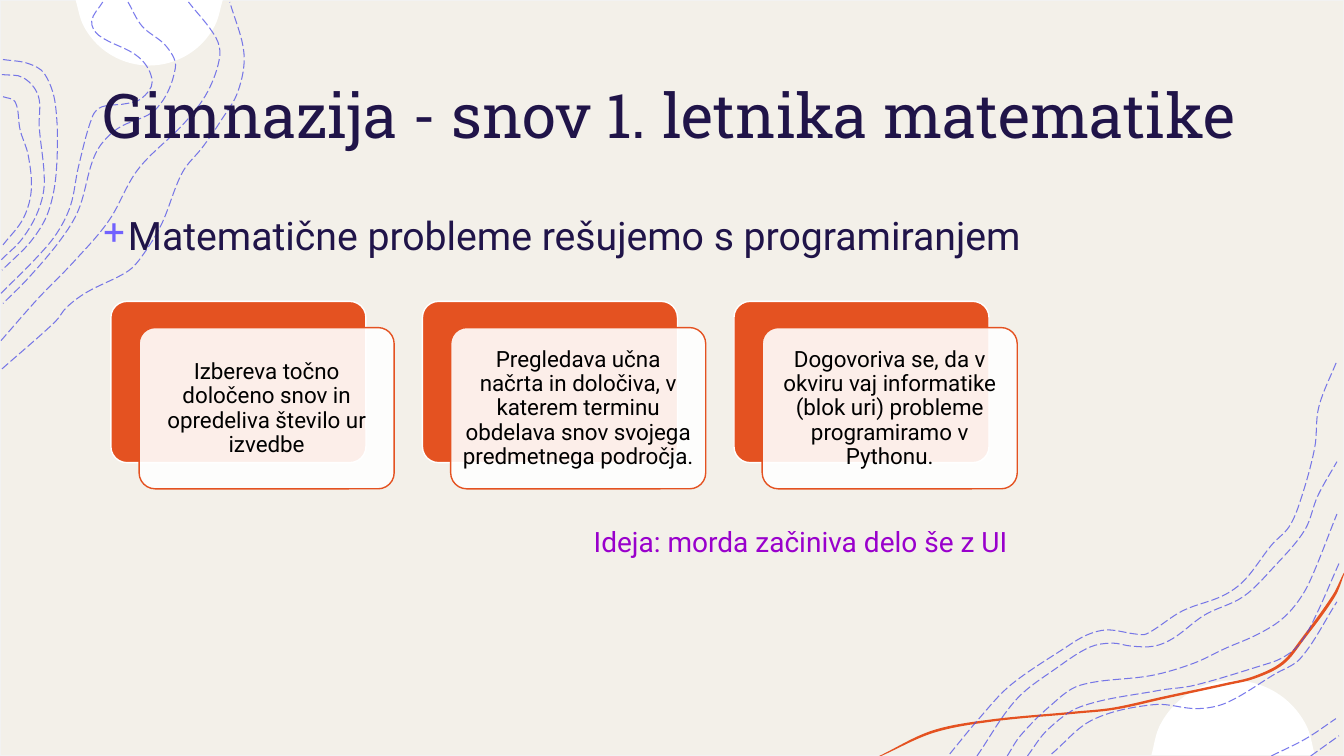
"""Builds a slide on solving first-year maths problems with programming."""
from math import asin, cos, dist, pi, sin

from lxml.etree import SubElement
from pptx import Presentation
from pptx.dml.color import RGBColor
from pptx.enum.dml import MSO_LINE
from pptx.enum.shapes import MSO_SHAPE
from pptx.enum.text import MSO_ANCHOR, PP_ALIGN
from pptx.oxml.ns import qn
from pptx.util import Cm, Pt

TITLE = "Gimnazija - snov 1. letnika matematike"
LEAD = "Matematične probleme rešujemo s programiranjem"
IDEA = "Ideja: morda začiniva delo še z UI"
CARDS = [
    "Izbereva točno določeno snov in opredeliva število ur izvedbe",
    "Pregledava učna načrta in določiva, v katerem terminu obdelava snov svojega predmetnega področja.",
    "Dogovoriva se, da v okviru vaj informatike (blok uri) probleme programiramo v Pythonu.",
]

WIDE, HIGH = 13.33, 7.5
WHITE = RGBColor(0xFF, 0xFF, 0xFF)
BLACK = RGBColor(0, 0, 0)
SAND = RGBColor(0xF3, 0xF0, 0xE9)
EDGE = RGBColor(0xF2, 0xF2, 0xF2)
ORANGE = RGBColor(0xE4, 0x52, 0x21)
BLUE = RGBColor(0x4D, 0x4E, 0xE6)
NAVY = RGBColor(0x20, 0x14, 0x49)
PURPLE = RGBColor(0x99, 0x00, 0xCC)

CAPS = [(1.48, 0, 0.73, 0.65, 1), (12.23, 7.49, 0.81, 0.74, -1)]
BAND = [
    (8.72, 7.5), (9.24, 7.25), (9.81, 7.14), (10.65, 7.06), (11.04, 7.02), (11.54, 6.91),
    (12.14, 6.78), (12.43, 6.71), (12.71, 6.57), (12.91, 6.33), (13.22, 5.9), (13.33, 5.68),
]
LEFT = [
    [(0.02, 3.66), (0.55, 3.19), (0.66, 3.05), (0.86, 2.9), (1.27, 2.69), (1.41, 2.54),
     (1.6, 2.23), (1.81, 1.71), (2.01, 1.46), (2.19, 1.2), (2.36, 0.91), (2.42, 0.53),
     (2.28, 0.02)],
    [(0.01, 3.38), (0.38, 2.96), (0.73, 2.6), (1.08, 2.19), (1.37, 1.68), (1.83, 1.22),
     (2.06, 0.91), (2.18, 0.56), (2.14, 0.37), (1.87, 0.02)],
    [(1.27, 0.02), (1.41, 0.26), (1.65, 0.46), (1.74, 0.67), (1.55, 1.08), (1.16, 1.28),
     (0.95, 1.52), (0.78, 2.08), (0.6, 2.38), (0.28, 2.76), (0.03, 3.01)],
    [(0.01, 2.91), (0.35, 2.57), (0.56, 2.32), (0.7, 2.04), (0.78, 1.65), (0.92, 1.15),
     (1.01, 1.06), (1.24, 1.03), (1.4, 0.98), (1.51, 0.81), (1.38, 0.57), (0.98, 0.35),
     (0.91, 0.21), (1.02, 0.02)],
    [(0.03, 0.59), (0.28, 0.63), (0.44, 0.73), (0.55, 1.04), (0.56, 1.68), (0.48, 2.1),
     (0.31, 2.39), (0.02, 2.68)],
    [(0.02, 0.74), (0.23, 0.77), (0.38, 0.95), (0.39, 1.26), (0.44, 1.81), (0.38, 2.09),
     (0.22, 2.37), (0.01, 2.58)],
    [(0.03, 0.96), (0.15, 1.01), (0.2, 1.29), (0.28, 1.54), (0.31, 1.89), (0.23, 2.17),
     (0.03, 2.43)],
]
RIGHT = [
    [(9.42, 7.48), (9.71, 7.13), (10.02, 6.8), (10.56, 6.43), (10.78, 6.3), (10.98, 6.25),
     (11.26, 6.29), (11.37, 6.29), (11.73, 6.06), (12.13, 5.91), (12.34, 5.76), (12.61, 5.41),
     (12.79, 5.22), (12.91, 4.93), (13.04, 4.44), (13.08, 4.04), (13.26, 3.58)],
    [(9.69, 7.5), (10.08, 6.94), (10.49, 6.62), (10.81, 6.42), (11.03, 6.38), (11.22, 6.41),
     (11.45, 6.41), (11.64, 6.33), (11.95, 6.1), (12.33, 5.92), (12.63, 5.63), (12.94, 5.26),
     (13.07, 4.92), (13.26, 4.58)],
    [(13, 7.5), (13.28, 7.3)],
    [(12.61, 7.5), (12.95, 7.33), (13.25, 7.13)],
    [(10.43, 7.48), (10.84, 7.14), (11.45, 6.99), (11.88, 7.03), (12.17, 6.97), (12.64, 6.69),
     (12.9, 6.53), (13.26, 5.97)],
    [(10.19, 7.5), (10.39, 7.24), (10.72, 7.01), (11.49, 6.85), (11.84, 6.8), (12.52, 6.6),
     (12.71, 6.53), (12.88, 6.4), (13.03, 6.15), (13.28, 5.59)],
    [(9.99, 7.5), (10.12, 7.3), (10.42, 7), (10.71, 6.8), (11.43, 6.7), (11.84, 6.58),
     (12.16, 6.43), (12.44, 6.31), (12.68, 6.17), (12.85, 6), (12.99, 5.77), (13.26, 5.1)],
]


def size(inch):
    return Cm(inch * 2.54)


def paint(shape, fill=None, line=None, width=1, alpha=None):
    shape.shadow.inherit = False
    if fill is None:
        shape.fill.background()
    else:
        shape.fill.solid()
        shape.fill.fore_color.rgb = fill
    if line is None:
        shape.line.fill.background()
    else:
        shape.line.color.rgb = line
        shape.line.width = Pt(width)
    if alpha:
        tone = next(shape.element.spPr.iter(qn("a:srgbClr")))
        SubElement(tone, qn("a:alpha"), val=str(alpha * 1000))


def bend(shape):
    """Turns the straight segments of a freeform into smooth curves."""
    dots = [(int(p.get("x")), int(p.get("y"))) for p in shape.element.spPr.iter(qn("a:pt"))]
    ends = [dots[0], *dots, dots[-1]]
    ways = []
    for a, b in zip(ends, ends[2:]):
        span = dist(a, b) or 1
        ways.append(((b[0] - a[0]) / span, (b[1] - a[1]) / span))
    parts = list(shape.element.spPr.iter(qn("a:lnTo")))
    for part, a, b, u, v in zip(parts, dots, dots[1:], ways, ways[1:]):
        reach = dist(a, b) / 3
        part.tag = qn("a:cubicBezTo")
        pulls = [(a[0] + u[0] * reach, a[1] + u[1] * reach),
                 (b[0] - v[0] * reach, b[1] - v[1] * reach)]
        for i, (x, y) in enumerate(pulls):
            knob = SubElement(part, qn("a:pt"), x=str(round(x)), y=str(round(y)))
            part.insert(i, knob)


def trace(shapes, dots, close, **style):
    spots = [(size(x), size(y)) for x, y in dots]
    form = shapes.build_freeform(*spots[0])
    form.add_line_segments(spots[1:], close=close)
    shape = form.convert_to_shape()
    bend(shape)
    paint(shape, **style)
    return shape


def box(shapes, kind, area, **style):
    shape = shapes.add_shape(kind, *map(size, area))
    paint(shape, **style)
    return shape


def write(shapes, text, area, points=16, font="Roboto", color=NAVY, align=PP_ALIGN.LEFT,
          anchor=MSO_ANCHOR.TOP, inset=None, space=None, after=None, left=0, bullet=None):
    frame = shapes.add_textbox(*map(size, area)).text_frame
    frame.word_wrap = True
    frame.vertical_anchor = anchor
    if inset is not None:
        frame.margin_left = frame.margin_right = size(inset)
        frame.margin_top = frame.margin_bottom = size(inset)
    para = frame.paragraphs[0]
    props = para._p.get_or_add_pPr()
    props.set("marL", str(size(left)))
    if bullet:
        sign, tint = bullet
        props.set("indent", str(-size(left)))
        SubElement(SubElement(props, qn("a:buClr")), qn("a:srgbClr"), val=tint)
        SubElement(props, qn("a:buChar"), char=sign)
    para.alignment = align
    if space:
        para.line_spacing = space
    if after:
        para.space_after = Pt(after)
    run = para.add_run()
    run.text = text
    run.font.name, run.font.size = font, Pt(points)
    run.font.color.rgb = color


def main():
    deck = Presentation()
    deck.slide_width, deck.slide_height = size(WIDE), size(HIGH)
    shapes = deck.slides.add_slide(deck.slide_layouts[6]).shapes
    box(shapes, MSO_SHAPE.RECTANGLE, (0, 0, WIDE, HIGH), fill=SAND, line=EDGE)

    for x, y, half, rise, way in CAPS:
        ray = (half ** 2 + rise ** 2) / (2 * rise)
        mid = y + way * (rise - ray)
        low = asin((ray - rise) / ray)
        turns = [low + (pi - 2 * low) * i / 8 for i in range(9)]
        arc = [(x + ray * cos(t), mid + way * ray * sin(t)) for t in turns]
        trace(shapes, arc, True, fill=WHITE)

    back = [(min(x + 0.02, WIDE), min(y + 0.02, HIGH)) for x, y in reversed(BAND)]
    trace(shapes, BAND + back, True, fill=ORANGE)

    for waves in (LEFT, RIGHT):
        group = shapes.add_group_shape().shapes
        for knots in waves:
            wave = trace(group, knots, False, line=BLUE, width=0.75, alpha=75)
            wave.line.dash_style = MSO_LINE.LONG_DASH

    write(shapes, TITLE, (0.92, 0.4, 11.5, 1.45), points=44, font="Roboto Slab",
          anchor=MSO_ANCHOR.MIDDLE)
    write(shapes, LEAD, (0.92, 2, 11.5, 0.69), points=28, space=1.1, left=0.25,
          bullet=("+", "7162FE"))

    group = shapes.add_group_shape().shapes
    for i, text in enumerate(CARDS):
        x = 1.1 + 3.09 * i
        for left, top, look in (
                (x, 2.99, dict(fill=ORANGE, line=WHITE)),
                (x + 0.28, 3.25, dict(fill=WHITE, line=ORANGE, alpha=90))):
            card = box(group, MSO_SHAPE.ROUNDED_RECTANGLE, (left, top, 2.53, 1.6), **look)
            card.adjustments[0] = 0.1
        write(group, text, (x + 0.33, 3.3, 2.43, 1.51), color=BLACK, align=PP_ALIGN.CENTER,
              anchor=MSO_ANCHOR.MIDDLE, inset=0.07, space=0.9, after=5.6)

    write(shapes, IDEA, (5.29, 5.15, 6.67, 0.44), points=20, color=PURPLE, left=0.5)
    deck.save("out.pptx")


if __name__ == "__main__":
    main()
